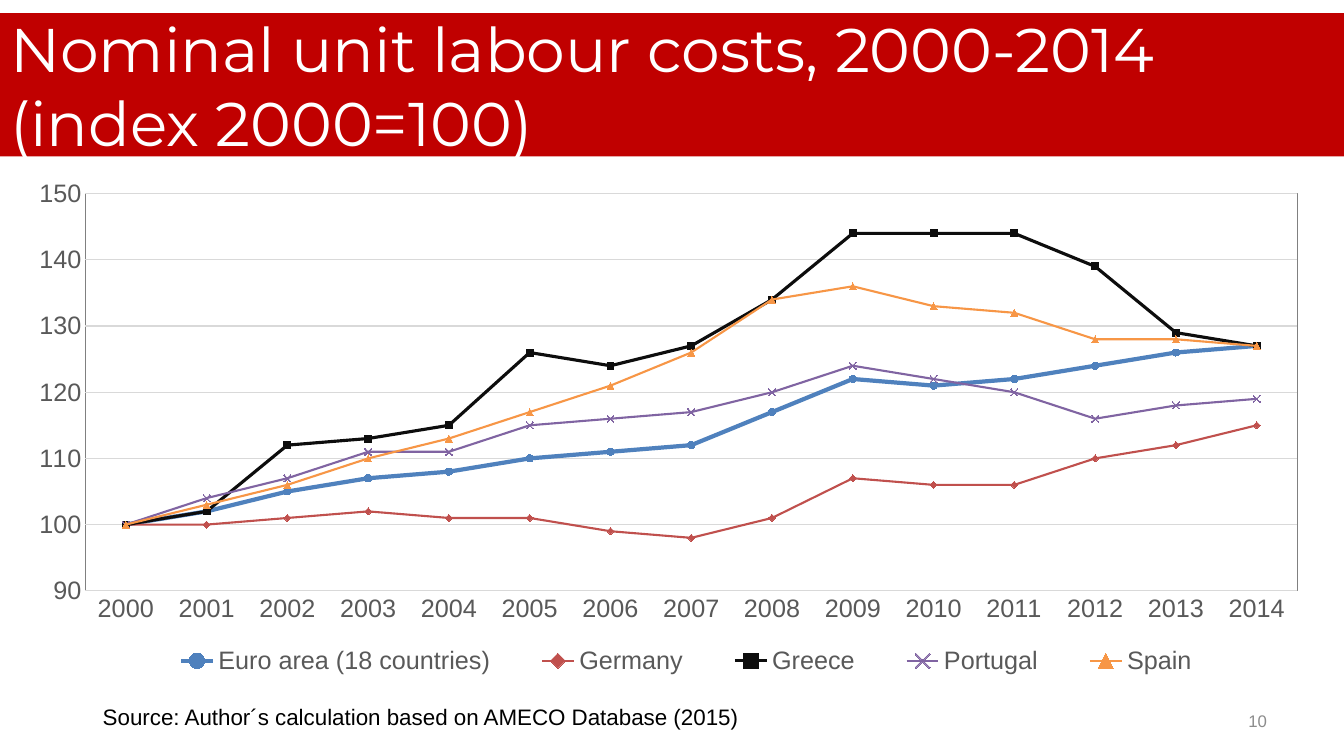
from lxml import etree
from pptx import Presentation
from pptx import util as u
from pptx.chart.data import CategoryChartData
from pptx.dml.color import RGBColor
from pptx.enum import chart as ch, text
from pptx.oxml import parse_xml
from pptx.oxml.ns import nsdecls, qn

FONT = "Arial"
GREY, GRID, FRAME = "595959", "D9D9D9", "808080"
YEARS = [str(y) for y in range(2000, 2015)]
M = ch.XL_MARKER_STYLE
# name, colour, line width in points, marker, index values
COUNTRIES = [
    ("Euro area (18 countries) ", "4F81BD", 3, M.CIRCLE,
     [100, 102, 105, 107, 108, 110, 111, 112, 117, 122, 121, 122, 124, 126, 127]),
    ("Germany ", "C0504D", 1.5, M.DIAMOND,
     [100, 100, 101, 102, 101, 101, 99, 98, 101, 107, 106, 106, 110, 112, 115]),
    ("Greece ", "0D0D0D", 2.25, M.SQUARE,
     [100, 102, 112, 113, 115, 126, 124, 127, 134, 144, 144, 144, 139, 129, 127]),
    ("Portugal ", "8064A2", 1.5, M.X,
     [100, 104, 107, 111, 111, 115, 116, 117, 120, 124, 122, 120, 116, 118, 119]),
    ("Spain ", "F79646", 1.5, M.TRIANGLE,
     [100, 103, 106, 110, 113, 117, 121, 126, 134, 136, 133, 132, 128, 128, 127]),
]


def rgb(hex_):
    return RGBColor.from_string(hex_)


def cm(box):
    return [u.Cm(v) for v in box]


def set_font(font, size, color, name=FONT):
    font.size, font.name = u.Pt(size), name
    font.color.rgb = rgb(color)


def set_line(line, color, width=0.75):
    line.color.rgb = rgb(color)
    line.width = u.Pt(width)


def write(sp, words, size=16, color="000000", font=FONT,
          align=text.PP_ALIGN.LEFT, anchor=text.MSO_ANCHOR.TOP):
    tf = sp.text_frame
    tf.word_wrap = True
    tf.auto_size = text.MSO_AUTO_SIZE.NONE
    tf.vertical_anchor = anchor
    p = tf.paragraphs[0]
    p.alignment = align
    r = p.add_run()
    r.text = words
    set_font(r.font, size, color, font)


def add_title(s, box):
    sp = s.shapes.title
    sp.left, sp.top, sp.width, sp.height = cm(box)
    sp.fill.solid()
    sp.fill.fore_color.rgb = rgb("C00000")
    write(sp, "Nominal unit labour costs, 2000-2014 (index 2000=100)", size=44,
          color="FFFFFF", font="Montserrat", anchor=text.MSO_ANCHOR.MIDDLE)


def place_part(part, index, **values):
    """Give a chart part a manual layout, as its child number index."""
    for old in part.findall(qn("c:layout")):
        part.remove(old)
    layout = parse_xml(f"<c:layout {nsdecls('c')}><c:manualLayout/></c:layout>")
    for tag, val in values.items():
        etree.SubElement(layout[0], qn("c:" + tag), val=str(val))
    part.insert(index, layout)


def place_plot_and_legend(chart):
    """Place both in fractions of the chart, and frame the plot."""
    area = chart._chartSpace.chart.plotArea
    place_part(area, 0, layoutTarget="inner", xMode="edge", yMode="edge",
               x=0.065, y=0.051, w=0.922, h=0.773)
    area.append(parse_xml(
        f"<c:spPr {nsdecls('c', 'a')}><a:noFill/><a:ln w='9525'><a:solidFill>"
        f"<a:srgbClr val='{FRAME}'/></a:solidFill></a:ln></c:spPr>"))
    legend = area.getparent().find(qn("c:legend"))
    place_part(legend, 1, xMode="edge", yMode="edge", x=0.11, y=0.92, w=0.83, h=0.08)


def format_axes(chart):
    for axis in (chart.category_axis, chart.value_axis):
        axis.major_tick_mark = axis.minor_tick_mark = ch.XL_TICK_MARK.NONE
        set_font(axis.tick_labels.font, 18, GREY)
    set_line(chart.category_axis.format.line, GRID)
    values = chart.value_axis
    values.minimum_scale, values.maximum_scale, values.major_unit = 90, 150, 10
    values.format.line.fill.background()
    values.has_major_gridlines = True
    set_line(values.major_gridlines.format.line, GRID)


def format_series(series, color, width, style):
    series.smooth = False
    set_line(series.format.line, color, width)
    marker = series.marker
    marker.style, marker.size = style, 5
    set_line(marker.format.line, color)
    if style == M.X:
        marker.format.fill.background()
    else:
        marker.format.fill.solid()
        marker.format.fill.fore_color.rgb = rgb(color)


def add_cost_chart(s, box):
    data = CategoryChartData()
    data.categories = YEARS
    for name, *_, values in COUNTRIES:
        data.add_series(name, values)
    chart = s.shapes.add_chart(ch.XL_CHART_TYPE.LINE_MARKERS, *cm(box), data).chart
    chart.has_title = False
    set_font(chart.font, 18, "000000")
    chart.plots[0].vary_by_categories = False
    format_axes(chart)
    for series, (_, color, width, style, _) in zip(chart.plots[0].series, COUNTRIES):
        format_series(series, color, width, style)
    chart.has_legend = True
    chart.legend.position = ch.XL_LEGEND_POSITION.BOTTOM
    chart.legend.include_in_layout = False
    set_font(chart.legend.font, 18, GREY)
    place_plot_and_legend(chart)


def add_footer(s, box):
    x, y, w, h = box
    source = s.shapes.add_textbox(*cm((x, y, w, h)))
    write(source, "Source: Author´s calculation based on AMECO Database (2015)")
    number = s.shapes.add_textbox(*cm((x + w - 7.27, y + 0.05, 7.9, 1.02)))
    write(number, "10", size=12, color="8C8C8C", align=text.PP_ALIGN.RIGHT,
          anchor=text.MSO_ANCHOR.MIDDLE)


def main():
    prs = Presentation()
    prs.slide_width, prs.slide_height = u.Cm(33.87), u.Cm(19.05)
    s = prs.slides.add_slide(prs.slide_layouts[5])
    add_title(s, (0, 0.33, 33.87, 3.61))
    add_cost_chart(s, (0, 4.22, 33.12, 12.95))
    add_footer(s, (2.34, 17.6, 29.21, 0.94))
    prs.save("out.pptx")


if __name__ == "__main__":
    main()
